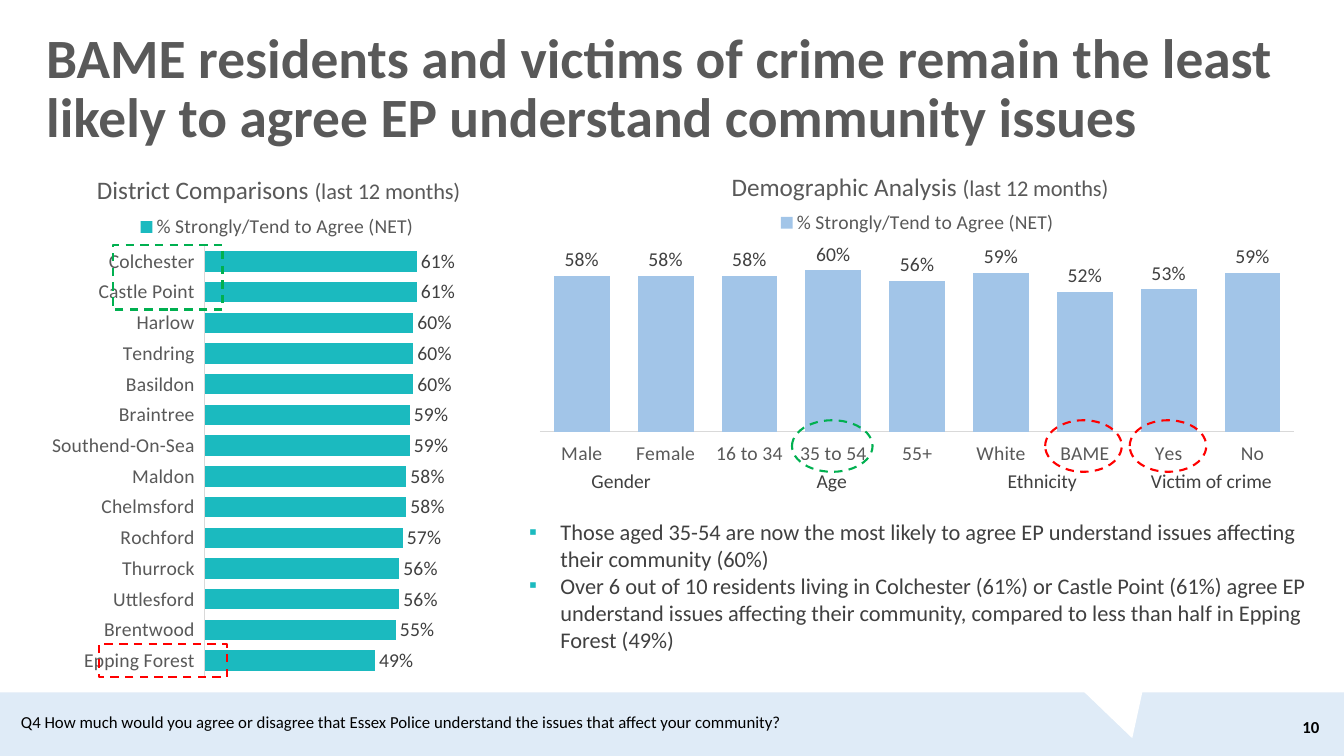
from lxml.etree import SubElement as Sub
from pptx import Presentation
from pptx.chart.data import CategoryChartData as Data
from pptx.dml.color import RGBColor as RGB
from pptx.enum.chart import XL_CHART_TYPE as Kind
from pptx.enum.chart import XL_LABEL_POSITION as Spot
from pptx.enum.chart import XL_LEGEND_POSITION as Side
from pptx.enum.chart import XL_TICK_LABEL_POSITION as Tag
from pptx.enum.chart import XL_TICK_MARK as Tick
from pptx.enum.dml import MSO_LINE as Dash
from pptx.enum.shapes import MSO_SHAPE as Form
from pptx.enum.text import MSO_ANCHOR as Anchor
from pptx.enum.text import MSO_AUTO_SIZE as Fit
from pptx.enum.text import PP_ALIGN as Align
from pptx.oxml import parse_xml
from pptx.oxml.ns import nsdecls, qn
from pptx.util import Cm, Pt

WHITE = RGB(0xFF, 0xFF, 0xFF)
BLACK = RGB(0, 0, 0)
GREY = RGB(0x59, 0x59, 0x59)
DARK = RGB(0x40, 0x40, 0x40)
RULE = RGB(0xD9, 0xD9, 0xD9)
PALE = RGB(0xDF, 0xEB, 0xF7)
BLUE = RGB(0xA2, 0xC5, 0xE8)
TEAL = RGB(0x1B, 0xBA, 0xBF)
GREEN = RGB(0, 0xB0, 0x50)
RED = RGB(0xFF, 0, 0)
FACE = "Calibri"

TITLE = ("BAME residents and victims of crime remain the least likely "
         "to agree EP understand community issues")
QUERY = ("Q4 How much would you agree or disagree that Essex Police "
         "understand the issues that affect your community?")
POINTS = [
    "Those aged 35-54 are now the most likely to agree EP understand issues "
    "affecting their community (60%)",
    "Over 6 out of 10 residents living in Colchester (61%) or Castle Point "
    "(61%) agree EP understand issues affecting their community, compared to "
    "less than half in Epping Forest (49%)",
]
GROUPS = [("Gender", 4.29), ("Age", 6.32), ("Ethnicity", 4.29),
          ("Victim of crime", 4.24)]
PEOPLE = {"Male": 0.58, "Female": 0.58, "16 to 34": 0.58, "35 to 54": 0.6,
          "55+": 0.56, "White": 0.59, "BAME": 0.52, "Yes": 0.53, "No": 0.59}
AREAS = {"Colchester": 0.61, "Castle Point": 0.61, "Harlow": 0.6,
         "Tendring": 0.6, "Basildon": 0.6, "Braintree": 0.59,
         "Southend-On-Sea": 0.59, "Maldon": 0.58, "Chelmsford": 0.58,
         "Rochford": 0.57, "Thurrock": 0.56, "Uttlesford": 0.56,
         "Brentwood": 0.55, "Epping Forest": 0.49}
MARKS = [
    (Form.RECTANGLE, GREEN, (2.84, 6.17, 2.77, 1.63)),
    (Form.RECTANGLE, RED, (2.49, 16.23, 3.23, 0.84)),
    (Form.OVAL, GREEN, (19.96, 10.59, 2.03, 1.3)),
    (Form.OVAL, RED, (26.34, 10.59, 1.93, 1.3)),
    (Form.OVAL, RED, (28.47, 10.59, 1.93, 1.3)),
]


def cms(box):
    return [Cm(n) for n in box]


def style(font, size, color, bold=False):
    font.name, font.size, font.bold = FACE, Pt(size), bold
    font.color.rgb = color


def write(para, text, size=14, color=DARK, bold=False, align=None, lead=None):
    run = para.add_run()
    run.text = text
    style(run.font, size, color, bold)
    if align is not None:
        para.alignment = align
    if lead:
        para.line_spacing = lead


def move(shape, box):
    shape.left, shape.top, shape.width, shape.height = cms(box)


def add_text(slide, box, text, anchor=Anchor.TOP, **look):
    frame = slide.shapes.add_textbox(*cms(box)).text_frame
    frame.word_wrap = True
    frame.vertical_anchor = anchor
    write(frame.paragraphs[0], text, **look)


def add_form(slide, form, box, fill=None, line=None, turn=0):
    shape = slide.shapes.add_shape(form, *cms(box))
    shape.shadow.inherit = False
    shape.rotation = turn
    if fill is None:
        shape.fill.background()
    else:
        shape.fill.solid()
        shape.fill.fore_color.rgb = fill
    if line is None:
        shape.line.fill.background()
    else:
        shape.line.color.rgb = line
        shape.line.width = Pt(1.5)
        shape.line.dash_style = Dash.DASH


def place(node, index, spot, inner=False):
    for old in node.findall(qn("c:layout")):
        node.remove(old)
    layout = parse_xml(f"<c:layout {nsdecls('c')}><c:manualLayout/></c:layout>")
    if inner:
        Sub(layout[0], qn("c:layoutTarget")).set("val", "inner")
    for key in ("xMode", "yMode"):
        Sub(layout[0], qn("c:" + key)).set("val", "edge")
    for key, num in zip("xywh", spot):
        Sub(layout[0], qn("c:" + key)).set("val", str(num))
    node.insert(index, layout)


def add_graph(slide, kind, box, name, table, color, top, head, key, plot):
    data = Data(number_format="0%")
    data.categories = list(table)
    data.add_series("% Strongly/Tend to Agree (NET)", list(table.values()))
    chart = slide.shapes.add_chart(kind, *cms(box), data).chart
    style(chart.font, 14, BLACK)

    chart.has_title = True
    para = chart.chart_title.text_frame.paragraphs[0]
    write(para, name + " ", size=18, color=GREY)
    write(para, "(last 12 months)", size=16, color=GREY)
    chart.chart_title.include_in_layout = False
    place(chart.chart_title._element, 1, head)

    chart.has_legend = True
    legend = chart.legend
    legend.position = Side.TOP
    legend.include_in_layout = False
    style(legend.font, 14, GREY)
    place(legend._element, 1, key)
    place(chart._chartSpace.chart.plotArea, 0, plot, inner=True)

    axis = chart.category_axis
    axis.major_tick_mark = axis.minor_tick_mark = Tick.NONE
    axis.tick_label_position = Tag.LOW
    axis.has_major_gridlines = False
    axis.reverse_order = kind == Kind.BAR_CLUSTERED
    style(axis.tick_labels.font, 14, GREY)
    axis.format.line.color.rgb = RULE
    axis.format.line.width = Pt(0.75)
    scale = chart.value_axis
    scale.minimum_scale, scale.maximum_scale = 0, top
    scale.has_major_gridlines = False
    scale.visible = False

    bars = chart.plots[0]
    bars.gap_width = 50
    bars.vary_by_categories = False
    fill = bars.series[0].format.fill
    fill.solid()
    fill.fore_color.rgb = color
    bars.has_data_labels = True
    labels = bars.data_labels
    labels.show_value = True
    labels.position = Spot.OUTSIDE_END
    labels.number_format = "0%"
    labels.number_format_is_linked = False
    style(labels.font, 14, DARK)


def add_groups(slide):
    width = sum(size for _, size in GROUPS)
    box = cms((13.51, 11.61, width, 1.04))
    table = slide.shapes.add_table(1, len(GROUPS), *box).table
    table.first_row = table.horz_banding = False
    for col, (name, size) in enumerate(GROUPS):
        table.columns[col].width = Cm(size)
        cell = table.cell(0, col)
        cell.fill.background()
        cell.vertical_anchor = Anchor.MIDDLE
        write(cell.text_frame.paragraphs[0], name, align=Align.CENTER)


def fill_title(shape):
    move(shape, (0.91, 0.43, 32.59, 3.68))
    frame = shape.text_frame
    frame.auto_size = Fit.NONE
    frame.vertical_anchor = Anchor.MIDDLE
    write(frame.paragraphs[0], TITLE, size=39.6, color=GREY, bold=True,
          align=Align.LEFT, lead=0.9)


def fill_list(shape):
    move(shape, (13.08, 12.93, 20.17, 3.68))
    frame = shape.text_frame
    frame.auto_size = Fit.NONE
    for num, text in enumerate(POINTS):
        para = frame.add_paragraph() if num else frame.paragraphs[0]
        write(para, text, size=16, lead=1.0)
        para.space_before = Pt(0)
        props = para._p.get_or_add_pPr()
        props.set("marL", str(Cm(0.79)))
        props.set("indent", str(Cm(-0.79)))
        tint = Sub(props, qn("a:buClr"))
        Sub(tint, qn("a:srgbClr")).set("val", str(TEAL))
        Sub(props, qn("a:buChar")).set("char", "▪")


def main():
    deck = Presentation()
    deck.slide_width, deck.slide_height = Cm(33.87), Cm(19.05)
    slide = deck.slides.add_slide(deck.slide_layouts[1])
    add_form(slide, Form.RECTANGLE, (0, 17.45, 33.87, 1.6), fill=PALE)
    add_form(slide, Form.ISOSCELES_TRIANGLE, (27.3, 16.89, 1.96, 1.75),
             fill=WHITE, turn=163.1)
    add_graph(slide, Kind.COLUMN_CLUSTERED, (13.21, 3.73, 19.81, 8.03),
              "Demographic Analysis", PEOPLE, BLUE, 0.7, (0.26, 0.06),
              (0.32, 0.19, 0.36, 0.09), (0.02, 0.3, 0.96, 0.59))
    add_graph(slide, Kind.BAR_CLUSTERED, (0.91, 3.73, 12.14, 13.72),
              "District Comparisons", AREAS, TEAL, 0.9, (0.12, 0.04),
              (0.21, 0.12, 0.58, 0.05), (0.35, 0.18, 0.65, 0.79))
    fill_title(slide.shapes.title)
    fill_list(slide.placeholders[1])
    add_groups(slide)
    for form, color, box in MARKS:
        add_form(slide, form, box, line=color)
    add_text(slide, (0.28, 17.81, 19.84, 0.76), QUERY, size=12, color=BLACK)
    add_text(slide, (32.05, 17.81, 1.45, 1.02), "10", anchor=Anchor.MIDDLE,
             size=12, color=BLACK, bold=True, align=Align.RIGHT)
    deck.save("out.pptx")


if __name__ == "__main__":
    main()
